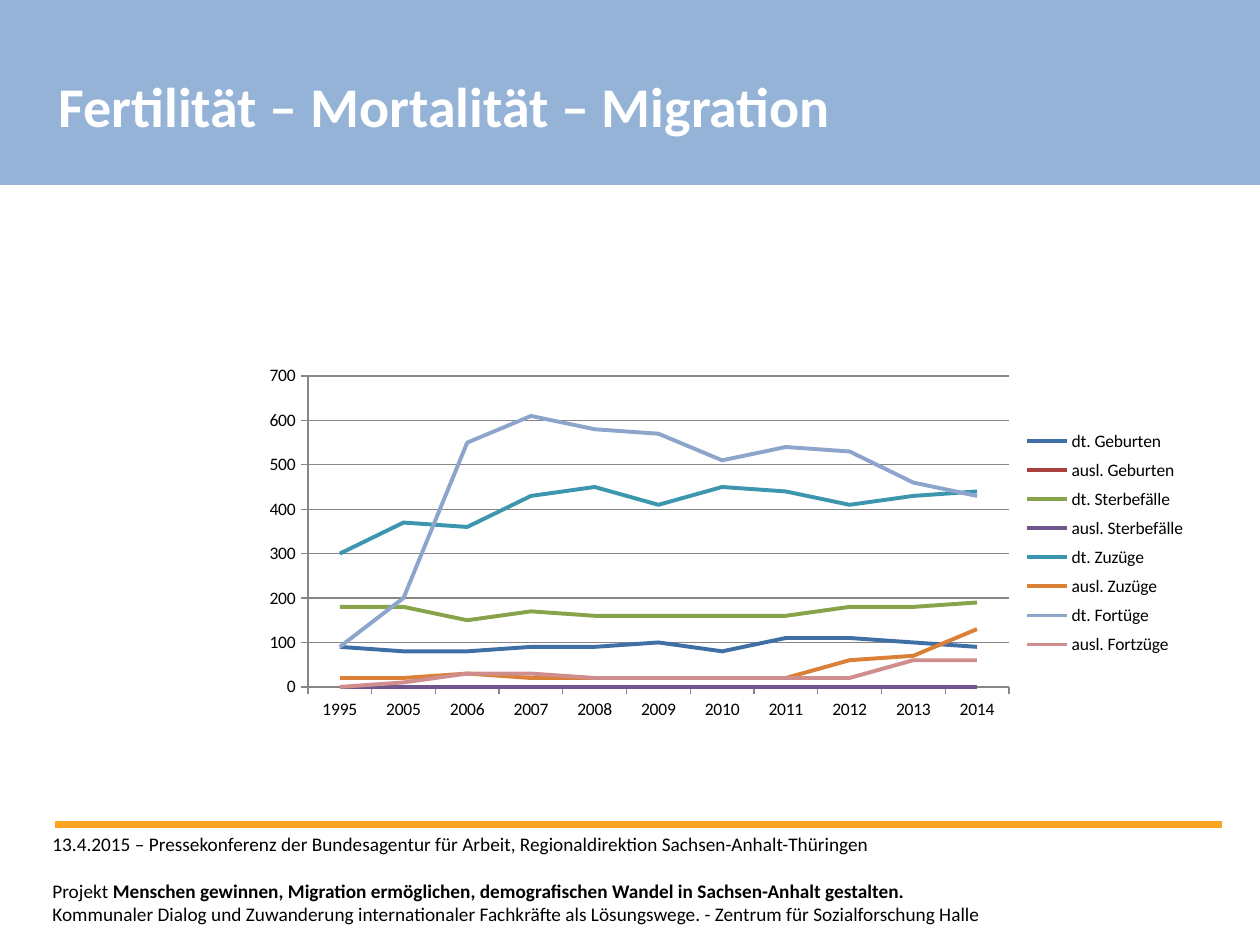
"""Build the slide on births, deaths and migration with a line chart."""
import pptx
import pptx.chart.data
import pptx.dml.color
import pptx.enum.chart
import pptx.enum.shapes
import pptx.enum.text
import pptx.oxml
import pptx.oxml.ns
import pptx.util
from lxml import etree

SCALE = 914400 / 126
FONT = "Calibri"
COLORS = {
    "band": "95B3D7", "rule": "FCA320", "white": "FFFFFF", "black": "000000", "grid": "868686",
    "blue": "406FA6", "red": "A9423F", "green": "87A44A", "purple": "6F558E",
    "teal": "3C96AE", "orange": "DA8137", "light_blue": "8EA5CB", "pink": "CF8E8D",
}
YEARS = ["1995", *map(str, range(2005, 2015))]
SERIES = [
    ("dt. Geburten", "blue", [90, 80, 80, 90, 90, 100, 80, 110, 110, 100, 90]),
    ("ausl. Geburten", "red", [0] * len(YEARS)),
    ("dt. Sterbefälle", "green", [180, 180, 150, 170, 160, 160, 160, 160, 180, 180, 190]),
    ("ausl. Sterbefälle", "purple", [0] * len(YEARS)),
    ("dt. Zuzüge", "teal", [300, 370, 360, 430, 450, 410, 450, 440, 410, 430, 440]),
    ("ausl. Zuzüge", "orange", [20, 20, 30, 20, 20, 20, 20, 20, 60, 70, 130]),
    ("dt. Fortüge", "light_blue", [90, 200, 550, 610, 580, 570, 510, 540, 530, 460, 430]),
    ("ausl. Fortzüge", "pink", [0, 10, 30, 30, 20, 20, 20, 20, 20, 60, 60]),
]
PLOT_FRAME = (55, 11, 701, 311)
LEGEND_FRAME = (767, 57, 170, 242)
FOOTER = [
    [[("13.4.2015 – Pressekonferenz der Bundesagentur für Arbeit, "
       "Regionaldirektion Sachsen-Anhalt-Thüringen", False)]],
    [[("Projekt ", False),
      ("Menschen gewinnen, Migration ermöglichen, demografischen Wandel "
       "in Sachsen-Anhalt gestalten.", True)],
     [("Kommunaler Dialog und Zuwanderung internationaler Fachkräfte als Lösungswege. - "
       "Zentrum für Sozialforschung Halle", False)]],
]


def emu(px):
    return pptx.util.Emu(round(px * SCALE))


def rgb(name):
    return pptx.dml.color.RGBColor.from_string(COLORS[name])


class SlideBuilder:
    def __init__(self, slide):
        self.slide = slide
        self.shapes = slide.shapes

    def style(self, font, size, color, bold=False):
        font.name = FONT
        font.size = pptx.util.Pt(size)
        font.bold = bold
        font.color.rgb = rgb(color)

    def add_span(self, para, text, size, color, bold):
        span = para.add_run()
        span.text = text
        self.style(span.font, size, color, bold)

    def band(self, *frame):
        box = self.shapes.add_shape(pptx.enum.shapes.MSO_SHAPE.RECTANGLE, *map(emu, frame))
        box.shadow.inherit = False
        box.fill.solid()
        box.fill.fore_color.rgb = rgb("band")
        box.line.fill.background()

    def rule(self, left, right, y):
        line = self.shapes.add_connector(
            pptx.enum.shapes.MSO_CONNECTOR.STRAIGHT, emu(left), emu(y), emu(right), emu(y))
        line.line.color.rgb = rgb("rule")
        line.line.width = pptx.util.Pt(4)
        etree.SubElement(line.element.spPr, pptx.oxml.ns.qn("a:effectLst"))

    def title(self, text, *frame):
        box = self.shapes.title
        box.left, box.top, box.width, box.height = map(emu, frame)
        self.shapes.element.append(box.element)
        box.text_frame.word_wrap = False
        box.text_frame.vertical_anchor = pptx.enum.text.MSO_ANCHOR.TOP
        para = box.text_frame.paragraphs[0]
        para.alignment = pptx.enum.text.PP_ALIGN.LEFT
        self.add_span(para, text, 32, "white", True)

    def text(self, paragraphs, size, gap, *frame):
        box = self.shapes.add_textbox(*map(emu, frame))
        box.text_frame.word_wrap = True
        for index, lines in enumerate(paragraphs):
            para = box.text_frame.add_paragraph() if index else box.text_frame.paragraphs[0]
            para.space_before = pptx.util.Pt(gap if index else 0)
            for number, line in enumerate(lines):
                if number:
                    para.add_line_break()
                for content, bold in line:
                    self.add_span(para, content, size, "black", bold)

    def line_chart(self, *frame):
        data = pptx.chart.data.CategoryChartData()
        data.categories = YEARS
        for name, _, values in SERIES:
            data.add_series(name, values)
        chart = self.shapes.add_chart(
            pptx.enum.chart.XL_CHART_TYPE.LINE, *map(emu, frame), data).chart
        self.style(chart.font, 10, "black")
        chart.has_title = False
        chart.has_legend = True
        chart.legend.position = pptx.enum.chart.XL_LEGEND_POSITION.RIGHT
        chart.legend.include_in_layout = False
        plot = chart.plots[0]
        plot.vary_by_categories = False
        for series, (_, color, _) in zip(plot.series, SERIES):
            series.smooth = False
            series.marker.style = pptx.enum.chart.XL_MARKER_STYLE.NONE
            series.format.line.color.rgb = rgb(color)
            series.format.line.width = pptx.util.Pt(2.25)
        values = chart.value_axis
        values.minimum_scale, values.maximum_scale, values.major_unit = 0, 700, 100
        values.has_major_gridlines = True
        for part in (values, chart.category_axis, values.major_gridlines):
            part.format.line.color.rgb = rgb("grid")
            part.format.line.width = pptx.util.Pt(0.75)
        for axis in (values, chart.category_axis):
            axis.major_tick_mark = pptx.enum.chart.XL_TICK_MARK.OUTSIDE
        size = frame[2:]
        self.place_part(chart, "c:plotArea", PLOT_FRAME, size, layoutTarget="inner")
        self.place_part(chart, "c:legend", LEGEND_FRAME, size)

    def place_part(self, chart, tag, frame, size, **target):
        qn = pptx.oxml.ns.qn
        part = chart.element.find(".//" + qn(tag))
        layout = part.find(qn("c:layout"))
        if layout is None:
            layout = pptx.oxml.parse_xml(f"<c:layout {pptx.oxml.ns.nsdecls('c')}/>")
            part.insert(1 if tag == "c:legend" else 0, layout)
        manual = etree.SubElement(layout, qn("c:manualLayout"))
        shares = [round(length / whole, 4) for length, whole in zip(frame, size * 2)]
        settings = {**target, "xMode": "edge", "yMode": "edge", **dict(zip("xywh", shares))}
        for name, value in settings.items():
            etree.SubElement(manual, qn(f"c:{name}")).set("val", str(value))


def main():
    deck = pptx.Presentation()
    deck.slide_width, deck.slide_height = emu(1260), emu(945)
    page = SlideBuilder(deck.slides.add_slide(deck.slide_layouts[5]))
    page.rule(55, 1222, 825)
    page.band(0, 0, 1260, 185)
    page.title("Fertilität – Mortalität – Migration", 46, 65, 825, 81)
    page.text(FOOTER, 11, 13.4, 40, 826, 987, 106)
    page.line_chart(253, 365, 943, 358)
    deck.save("out.pptx")


if __name__ == "__main__":
    main()
